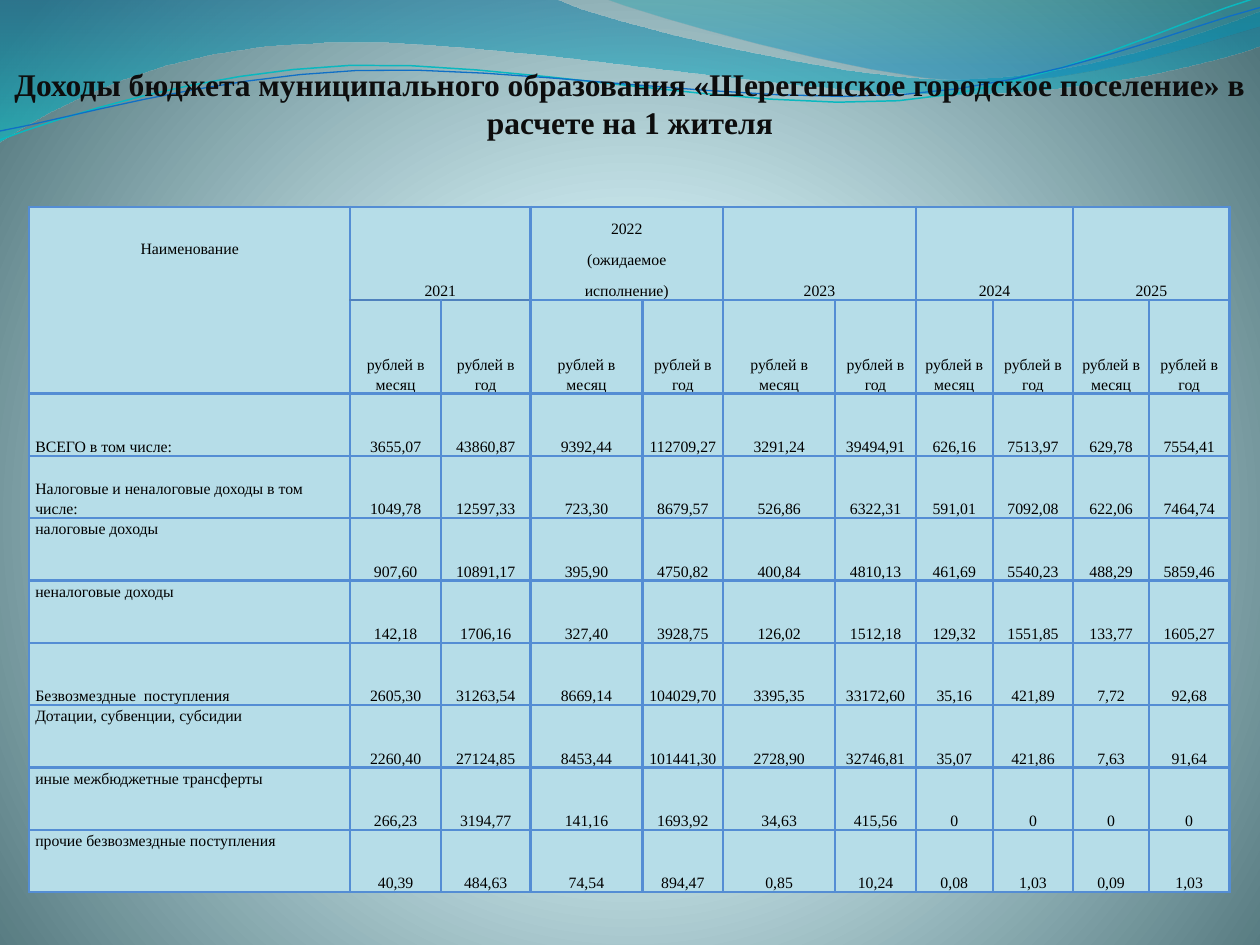
from lxml.etree import SubElement
from pptx import Presentation
from pptx.dml.color import RGBColor
from pptx.enum.text import MSO_ANCHOR, PP_ALIGN
from pptx.oxml.ns import qn
from pptx.util import Inches, Pt

FONT = "Times New Roman"
PLAIN_TABLE_STYLE = "{2D5ABB26-0587-4C30-8999-92F81FD0307C}"
TITLE_COLOR = RGBColor(0x0D, 0x0D, 0x0D)
CELL_COLOR = RGBColor(0xB6, 0xDD, 0xE8)
BORDER_COLOR = RGBColor(0x54, 0x8D, 0xD4)
THIN_BORDER_COLOR = RGBColor(0x4F, 0x81, 0xBD)
GLOW_LIGHT = RGBColor(0xDE, 0xFB, 0xFF)
GLOW_MIDDLE = RGBColor(0xDD, 0xFA, 0xFF)
GLOW_DARK = RGBColor(0x52, 0x76, 0x7C)
WAVE_BLUE = RGBColor(0x00, 0x74, 0xA1)
WAVE_CYAN = RGBColor(0x00, 0xC6, 0xCF)
CREST_TEAL = RGBColor(0x00, 0xA1, 0xA9)
CREST_BLUE = RGBColor(0x00, 0x8B, 0xBF)
LINE_CYAN = RGBColor(0x0A, 0xB8, 0xBF)
LINE_BLUE = RGBColor(0x0F, 0x6F, 0xC6)

presentation = Presentation()
presentation.slide_width = Inches(10)
presentation.slide_height = Inches(7.5)
slide = presentation.slides.add_slide(presentation.slide_layouts[6])

# The slide is a grid of 10 columns by 7.5 rows
COLUMN = presentation.slide_width / 10
ROW = presentation.slide_height / 7.5
CURVE_STEPS = 8


def paint_gradient(owner, fill, stops):
    """Fill with (position %, colour, opacity %) stops; return the gradient element."""
    fill.gradient()
    gradient = owner.find(".//" + qn("a:gradFill"))
    for child in list(gradient):
        gradient.remove(child)
    stop_list = SubElement(gradient, qn("a:gsLst"))
    for position, color, opacity in stops:
        stop = SubElement(stop_list, qn("a:gs"), pos=str(position * 1000))
        value = SubElement(stop, qn("a:srgbClr"), val=str(color))
        if opacity < 100:
            SubElement(value, qn("a:alpha"), val=str(opacity * 1000))
    return gradient


def draw_curve(start, segments, closed):
    """Pairs are straight segments; six numbers are a cubic curve."""
    points = [start]
    for segment in segments:
        if len(segment) == 2:
            points.append(segment)
            continue
        x0, y0 = points[-1]
        x1, y1, x2, y2, x3, y3 = segment
        for step in range(1, CURVE_STEPS + 1):
            t = step / CURVE_STEPS
            a, b, c, d = (1 - t) ** 3, 3 * t * (1 - t) ** 2, 3 * t * t * (1 - t), t ** 3
            points.append((a * x0 + b * x1 + c * x2 + d * x3,
                           a * y0 + b * y1 + c * y2 + d * y3))
    points = [(round(x * COLUMN), round(y * ROW)) for x, y in points]
    builder = slide.shapes.build_freeform(*points[0])
    builder.add_line_segments(points[1:], close=closed)
    shape = builder.convert_to_shape()
    shape.shadow.inherit = False
    return shape


# Background glow
gradient = paint_gradient(slide.element, slide.background.fill, [
    (0, GLOW_LIGHT, 100), (25, GLOW_MIDDLE, 100), (100, GLOW_DARK, 100)])
glow = SubElement(gradient, qn("a:path"), path="circle")
SubElement(glow, qn("a:fillToRect"), l="10000", t="110000", r="10000", b="100000")

# Translucent waves along the top
waves = [
    ((0, 0), [(4.4, -0.01), (4.76, 0.17, 6.64, 0.63, 7.58, 0.63),
              (8.53, 0.63, 9.58, 0.26, 10, 0.09), (10.01, 0.36),
              (9.83, 0.44, 8.7, 0.76, 7.46, 0.75), (6.22, 0.75, 3.82, 0.28, 2.57, 0.34),
              (1.29, 0.36, 0.46, 0.83, -0.01, 1.13)],
     [(0, WAVE_BLUE, 45), (100, WAVE_CYAN, 55)]),
    ((4.79, -0.01), [(5.09, 0.11, 6.82, 0.62, 7.69, 0.65),
                     (8.56, 0.69, 9.61, 0.32, 10, 0.21), (10, 0)],
     [(0, CREST_TEAL, 30), (80, CREST_BLUE, 45)]),
]
for start, segments, stops in waves:
    wave = draw_curve(start, segments, True)
    gradient = paint_gradient(wave.element, wave.fill, stops)
    SubElement(gradient, qn("a:lin"), ang="5400000", scaled="1")
    wave.line.fill.background()

# Thin lines following the waves
wave_lines = [
    ((0, 1.11), [(0.48, 0.93, 1.58, 0.57, 2.77, 0.52), (3.95, 0.47, 5.93, 0.89, 7.13, 0.8),
                 (8.33, 0.71, 9.38, 0.15, 9.98, -0.02)], LINE_CYAN, 0.85),
    ((0, 1.04), [(0.47, 0.96, 1.64, 0.61, 2.83, 0.56), (4.03, 0.51, 5.97, 0.84, 7.17, 0.75),
                 (8.36, 0.67, 9.41, 0.21, 10, 0.06)], LINE_BLUE, 0.75),
]
for start, segments, color, width in wave_lines:
    wave_line = draw_curve(start, segments, False)
    wave_line.fill.background()
    wave_line.line.color.rgb = color
    wave_line.line.width = Pt(width)

# Table contents: label, label anchor, month and year values for each year
TOP, BOTTOM = MSO_ANCHOR.TOP, MSO_ANCHOR.BOTTOM
incomes = [
    ("ВСЕГО в том числе:", BOTTOM,
     "3655,07 43860,87 9392,44 112709,27 3291,24 39494,91 626,16 7513,97 629,78 7554,41"),
    ("Налоговые и неналоговые доходы в том числе:", BOTTOM,
     "1049,78 12597,33 723,30 8679,57 526,86 6322,31 591,01 7092,08 622,06 7464,74"),
    ("налоговые доходы", TOP,
     "907,60 10891,17 395,90 4750,82 400,84 4810,13 461,69 5540,23 488,29 5859,46"),
    ("неналоговые доходы", TOP,
     "142,18 1706,16 327,40 3928,75 126,02 1512,18 129,32 1551,85 133,77 1605,27"),
    ("Безвозмездные  поступления", BOTTOM,
     "2605,30 31263,54 8669,14 104029,70 3395,35 33172,60 35,16 421,89 7,72 92,68"),
    ("Дотации, субвенции, субсидии", TOP,
     "2260,40 27124,85 8453,44 101441,30 2728,90 32746,81 35,07 421,86 7,63 91,64"),
    ("иные межбюджетные трансферты", TOP,
     "266,23 3194,77 141,16 1693,92 34,63 415,56 0 0 0 0"),
    ("прочие безвозмездные поступления", TOP,
     "40,39 484,63 74,54 894,47 0,85 10,24 0,08 1,03 0,09 1,03"),
]
texts = {(1, 0): "Наименование", (1, 3): "(ожидаемое", (2, 3): "исполнение)"}
for index in range(5):
    texts[0, 1 + 2 * index] = str(2021 + index)
    texts[3, 1 + 2 * index] = "рублей в месяц"
    texts[3, 2 + 2 * index] = "рублей в год"
anchors = {(1, 0): TOP}
for row, (label, anchor, values) in enumerate(incomes, 4):
    anchors[row, 0] = anchor
    for column, text in enumerate([label] + values.split()):
        texts[row, column] = text

# Table grid
column_widths = [2.55, 0.72, 0.71, 0.89, 0.64, 0.89, 0.64, 0.61, 0.64, 0.6, 0.64]
row_units = [1, 1, 1, 3] + [2] * len(incomes)
table_height = 5.44 * ROW
frame = slide.shapes.add_table(
    len(row_units), len(column_widths), round(0.23 * COLUMN), round(1.64 * ROW),
    round(sum(column_widths) * COLUMN), round(table_height))
table = frame.table
table.first_row = table.horz_banding = False
frame.element.find(".//" + qn("a:tableStyleId")).text = PLAIN_TABLE_STYLE
for table_column, width in zip(table.columns, column_widths):
    table_column.width = round(width * COLUMN)
for table_row, units in zip(table.rows, row_units):
    table_row.height = round(table_height * units / sum(row_units))
for column in (1, 5, 7, 9):
    table.cell(0, column).merge(table.cell(2, column + 1))
for row in range(3):
    table.cell(row, 3).merge(table.cell(row, 4))

# Cells: each draws its left and top edge, the outermost also right and bottom;
# the header rows of these columns run together down to the given row
open_until = {0: 3, 3: 2, 4: 2}
for row in range(len(row_units)):
    for column in range(len(column_widths)):
        cell = table.cell(row, column)
        paragraph = cell.text_frame.paragraphs[0]
        if (row, column) not in texts:
            SubElement(paragraph._p, qn("a:endParaRPr"), sz="900")
        if cell.is_spanned:
            continue
        cell.margin_left = cell.margin_right = Inches(0.05)
        cell.margin_top = cell.margin_bottom = 0
        cell.vertical_anchor = anchors.get((row, column), BOTTOM)
        span = cell.span_width if cell.is_merge_origin else 1
        sides = ["L"]
        if column + span == len(column_widths):
            sides.append("R")
        if not 0 < row <= open_until.get(column, 0):
            sides.append("T")
        if row == len(row_units) - 1:
            sides.append("B")
        for side in sides:
            thin = side == "T" and row == 3 and column in (1, 2)
            width, color = (1, THIN_BORDER_COLOR) if thin else (1.5, BORDER_COLOR)
            border = SubElement(cell._tc.get_or_add_tcPr(), qn("a:ln" + side), w=str(Pt(width)))
            SubElement(SubElement(border, qn("a:solidFill")), qn("a:srgbClr"), val=str(color))
        cell.fill.solid()
        cell.fill.fore_color.rgb = CELL_COLOR
        if (row, column) in texts:
            if column > 0 or row < 4:
                paragraph.alignment = PP_ALIGN.CENTER
            if column == 0 or row < 4:
                paragraph.line_spacing = 1.15
            run = paragraph.add_run()
            run.text = texts[row, column]
            run.font.name = FONT
            run.font.size = Pt(9)

# Title
title = slide.shapes.add_textbox(0, round(0.47 * ROW), presentation.slide_width, round(1.01 * ROW))
title.text_frame.word_wrap = True
title.text_frame.vertical_anchor = TOP
paragraph = title.text_frame.paragraphs[0]
paragraph.alignment = PP_ALIGN.CENTER
run = paragraph.add_run()
run.text = ("Доходы бюджета муниципального образования "
            "«Шерегешское городское поселение» в расчете на 1 жителя")
run.font.name = FONT
run.font.size = Pt(18)
run.font.bold = True
run.font.color.rgb = TITLE_COLOR

presentation.save("out.pptx")
